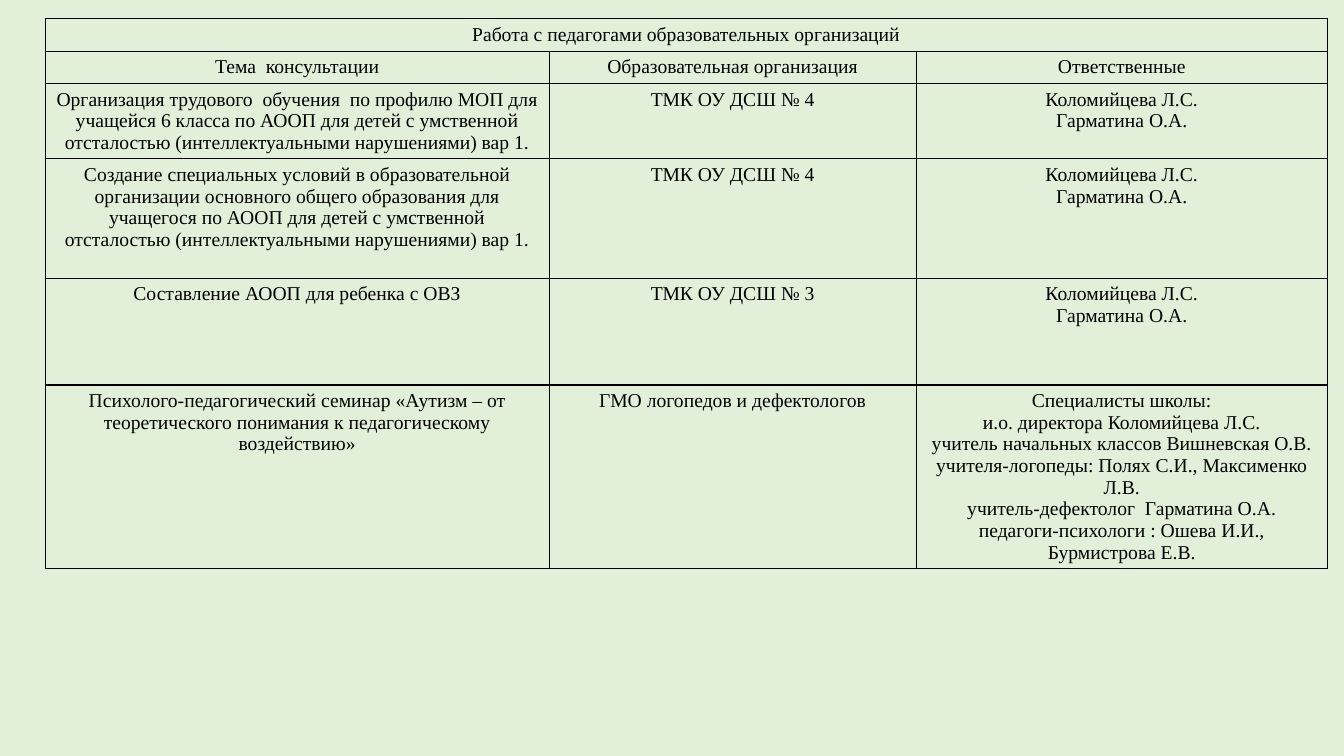
from lxml import etree
from pptx import Presentation
from pptx.dml.color import RGBColor as RGB
from pptx.enum.text import PP_ALIGN as ALIGN
from pptx.oxml.ns import qn
from pptx.util import Cm, Pt

COLORS = {"background": "E2F0D9", "text": "000000", "border": "000000"}
FONT = "Times New Roman"
COL_WIDTHS = [12.7, 9.25, 10.36]
ROW_HEIGHTS = [0.82, 0.82, 1.88, 3.01, 2.69, 4.63]
TITLE = "Работа с педагогами образовательных организаций"
HEADERS = ["Тема  консультации", "Образовательная организация", "Ответственные"]
CONSULTANTS = "Коломийцева Л.С.\nГарматина О.А."
CONSULTATIONS = [
    ["Организация трудового  обучения  по профилю МОП для учащейся 6 класса "
     "по АООП для детей с умственной отсталостью "
     "(интеллектуальными нарушениями) вар 1.",
     "ТМК ОУ ДСШ № 4", CONSULTANTS],
    ["Создание специальных условий в образовательной организации основного "
     "общего образования для учащегося по АООП для детей с умственной "
     "отсталостью (интеллектуальными нарушениями) вар 1.",
     "ТМК ОУ ДСШ № 4", CONSULTANTS],
    ["Составление АООП для ребенка с ОВЗ", "ТМК ОУ ДСШ № 3", CONSULTANTS],
    ["Психолого-педагогический семинар «Аутизм – от теоретического понимания "
     "к педагогическому воздействию»",
     "ГМО логопедов и дефектологов",
     "Специалисты школы:\n"
     "и.о. директора Коломийцева Л.С.\n"
     "учитель начальных классов Вишневская О.В.\n"
     "учителя-логопеды: Полях С.И., Максименко Л.В.\n"
     "учитель-дефектолог  Гарматина О.А.\n"
     "педагоги-психологи : Ошева И.И., Бурмистрова Е.В."],
]


def set_borders(cell):
    tc_pr = cell._tc.get_or_add_tcPr()
    for i, side in enumerate(["lnL", "lnR", "lnT", "lnB"]):
        ln = etree.Element(qn(f"a:{side}"), w=str(Pt(1)))
        fill = etree.SubElement(ln, qn("a:solidFill"))
        etree.SubElement(fill, qn("a:srgbClr"), val=COLORS["border"])
        tc_pr.insert(i, ln)


def write_cell(cell, text):
    """Write one centred paragraph for each line of text."""
    tf = cell.text_frame
    for i, line in enumerate(text.split("\n")):
        p = tf.add_paragraph() if i else tf.paragraphs[0]
        p.alignment = ALIGN.CENTER
        r = p.add_run()
        r.text = line
        r.font.name = FONT
        r.font.size = Pt(14)
        r.font.bold = False
        r.font.color.rgb = RGB.from_string(COLORS["text"])


def add_consultation_table(s, left, top):
    rows = [[TITLE], HEADERS, *CONSULTATIONS]
    frame = s.shapes.add_table(len(rows), len(HEADERS), Cm(left), Cm(top),
                               Cm(sum(COL_WIDTHS)), Cm(sum(ROW_HEIGHTS)))
    table = frame.table
    table.first_row = table.horz_banding = False
    for col, width in zip(table.columns, COL_WIDTHS):
        col.width = Cm(width)
    for row, height in zip(table.rows, ROW_HEIGHTS):
        row.height = Cm(height)
    for cell in table.iter_cells():
        cell.fill.background()
        set_borders(cell)
    table.cell(0, 0).merge(table.cell(0, len(HEADERS) - 1))
    for i, texts in enumerate(rows):
        for j, text in enumerate(texts):
            write_cell(table.cell(i, j), text)


def main():
    prs = Presentation()
    prs.slide_width, prs.slide_height = Cm(33.87), Cm(19.05)
    s = prs.slides.add_slide(prs.slide_layouts[6])
    s.background.fill.solid()
    s.background.fill.fore_color.rgb = RGB.from_string(COLORS["background"])
    add_consultation_table(s, 1.14, 0.47)
    prs.save("out.pptx")


if __name__ == "__main__":
    main()
